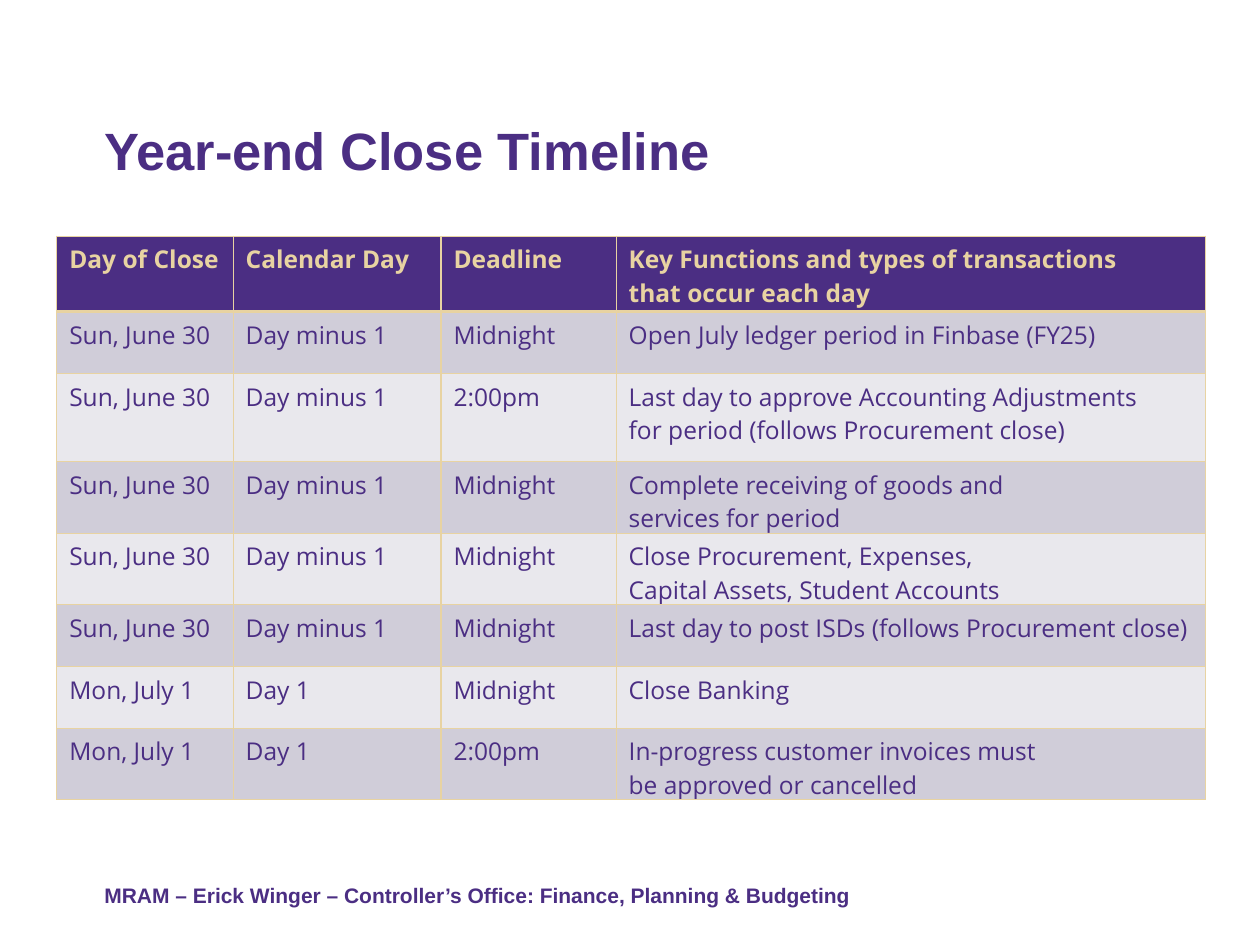
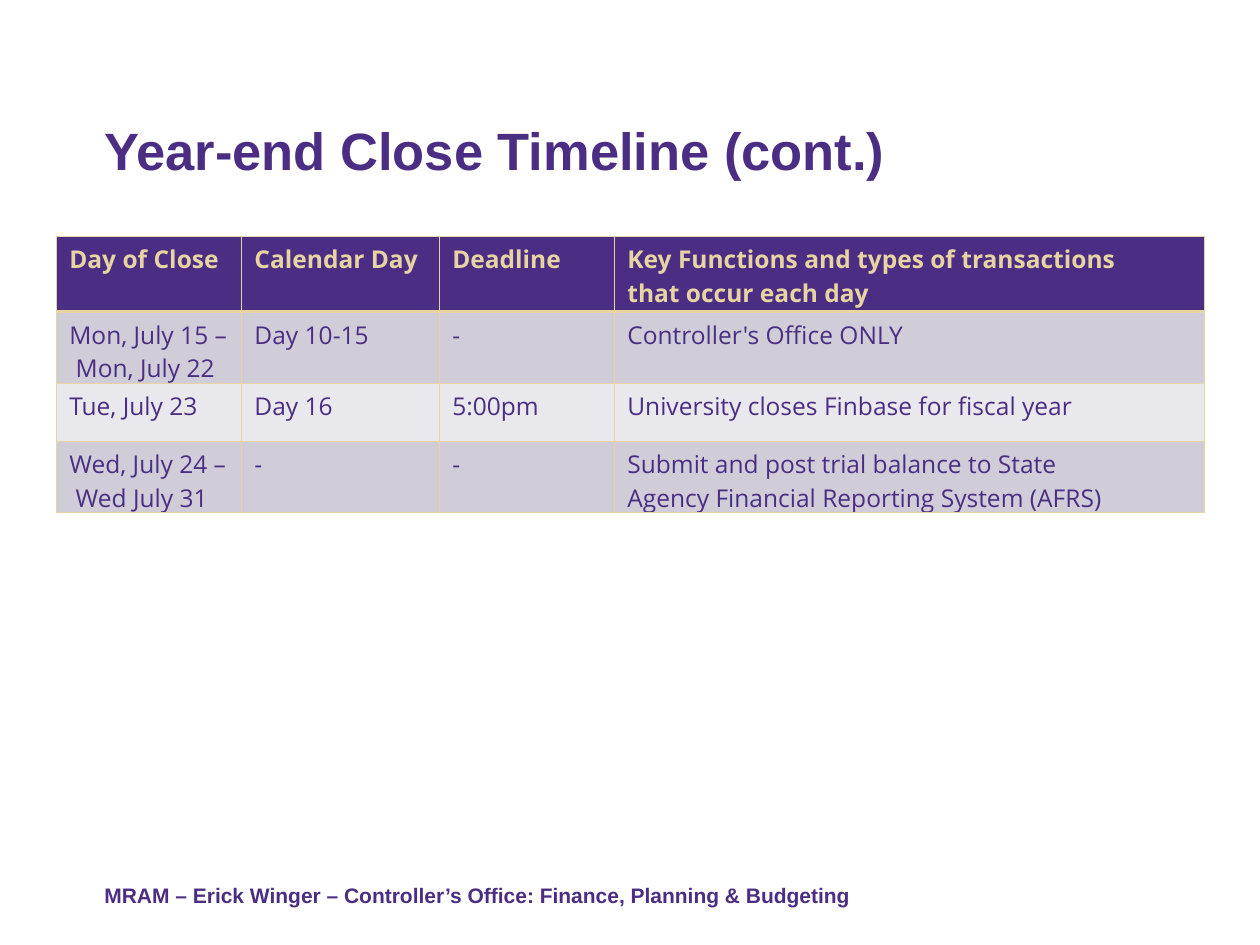
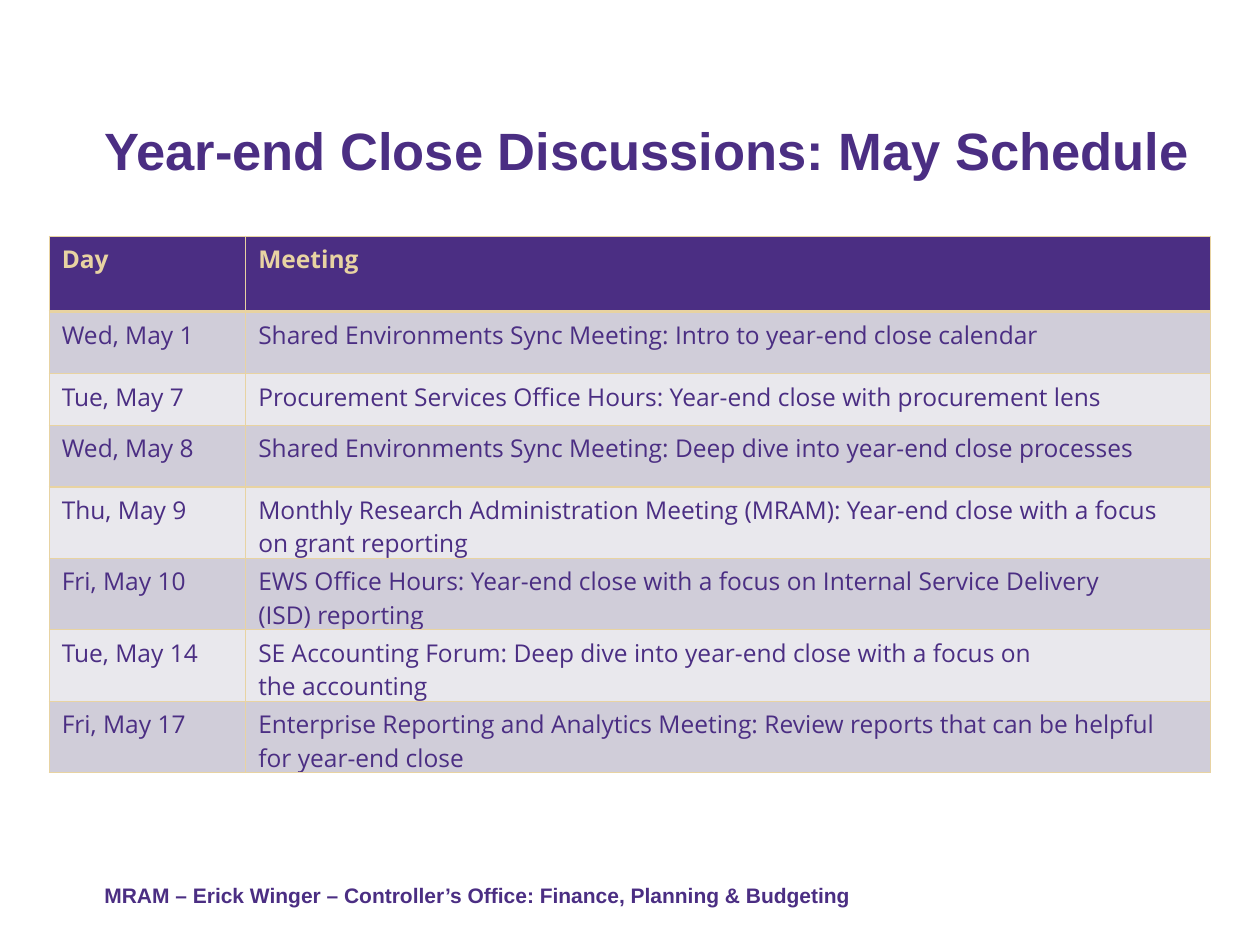
from dataclasses import dataclass

from lxml import etree
from pptx import Presentation
from pptx.dml.color import RGBColor
from pptx.enum.text import MSO_ANCHOR
from pptx.oxml.ns import qn
from pptx.slide import Slide
from pptx.table import _Cell
from pptx.util import Inches, Pt

ANCHOR_BOTTOM = MSO_ANCHOR.BOTTOM
SLIDE_WIDTH, SLIDE_HEIGHT = Inches(10), Inches(7.5)
COLOURS = {"purple": "4B2E83", "gold": "E8D3A2", "dark_band": "D0CDD9", "light_band": "E9E8ED"}
HEADING_FONT, TABLE_FONT = "Arial", "Open Sans"
TABLE_SIZE = 14
THIN, THICK = 0.75, 1.9
TABLE_TOP = 0.25  # share of the slide height
HEADER_ROW, BODY_ROW = 0.6, 0.49  # inches; rows grow with wrapped text
NO_BREAK_SPACE = chr(160)  # written as ~ in the table texts
FOOTER = "MRAM – Erick Winger – Controller’s Office: Finance, Planning & Budgeting"


@dataclass(frozen=True)
class HeadingStyle:
    """Position in shares of the slide, and type."""
    left: float
    top: float
    width: float
    height: float
    size: int
    line_spacing: float


@dataclass(frozen=True)
class Schedule:
    """One slide: columns are shares of the slide width."""
    title: str
    left: float
    columns: tuple[float, ...]
    rows: list[tuple[str, ...]]
    special_heights: dict[int, float]


TITLE_STYLE = HeadingStyle(0.073, 0.055, 0.895, 0.144, 30, 0.9)
FOOTER_STYLE = HeadingStyle(0.073, 0.919, 0.791, 0.048, 12, 1.5)

TIMELINE_HEADER = ("Day of~Close", "Calendar~Day", "Deadline",
                   "Key Functions and types of~transactions that~occur each day")
JUNE_30 = ("Sun,~June 30", "Day minus 1")
JULY_1 = ("Mon,~July 1", "Day 1")

SCHEDULES = [
    Schedule(
        "Year-end Close Timeline", 0.045, (0.14, 0.165, 0.139, 0.468),
        [
            TIMELINE_HEADER,
            (*JUNE_30, "Midnight", "Open July ledger period in Finbase (FY25)"),
            (*JUNE_30, "2:00pm", "Last day to approve Accounting~Adjustments "
             "for~period~(follows~Procurement~close)"),
            (*JUNE_30, "Midnight", "Complete receiving of goods and services~for~period"),
            (*JUNE_30, "Midnight", "Close Procurement, Expenses, "
             "Capital~Assets,~Student Accounts"),
            (*JUNE_30, "Midnight", "Last day to post ISDs (follows~Procurement close)"),
            (*JULY_1, "Midnight", "Close Banking"),
            (*JULY_1, "2:00pm", "In-progress customer invoices must be~approved~or cancelled"),
        ],
        {2: 0.7},
    ),
    Schedule(
        "Year-end Close Timeline (cont.)", 0.045, (0.147, 0.157, 0.139, 0.468),
        [
            TIMELINE_HEADER,
            ("Mon,~July 15 –~Mon, July 22", "Day 10-15", "-", "Controller's Office ONLY"),
            ("Tue, July 23", "Day 16", "5:00pm", "University closes Finbase for fiscal year"),
            ("Wed,~July 24 –~Wed July 31", "-", "-", "Submit and~post trial~balance to State "
             "Agency~Financial Reporting System (AFRS)"),
        ],
        {2: 0.46},
    ),
    Schedule(
        "Year-end Close Discussions: May Schedule", 0.039, (0.156, 0.766),
        [
            ("Day", "Meeting"),
            ("Wed, May 1", "Shared Environments Sync Meeting: Intro to year-end close calendar"),
            ("Tue, May 7", "Procurement Services Office Hours: "
             "Year-end close with procurement lens"),
            ("Wed, May 8", "Shared Environments Sync Meeting: "
             "Deep dive into year-end close processes"),
            ("Thu, May 9", "Monthly Research Administration Meeting (MRAM): "
             "Year-end close with a focus on~grant reporting"),
            ("Fri, May 10", "EWS Office Hours: Year-end close with a focus on "
             "Internal Service Delivery (ISD)~reporting"),
            ("Tue, May 14", "SE Accounting Forum: Deep dive into year-end close "
             "with a focus on the~accounting"),
            ("Fri, May 17", "Enterprise Reporting and Analytics Meeting: "
             "Review reports that can be helpful for~year-end close"),
        ],
        {2: 0.41},
    ),
]


def across(share: float) -> int:
    return round(SLIDE_WIDTH * share)


def down(share: float) -> int:
    return round(SLIDE_HEIGHT * share)


def colour(name: str) -> RGBColor:
    return RGBColor.from_string(COLOURS[name])


def set_font(paragraph, face: str, size: int, colour_name: str, bold: bool) -> None:
    font = paragraph.font
    font.name, font.size, font.bold = face, Pt(size), bold
    font.color.rgb = colour(colour_name)


def add_heading(slide: Slide, text: str, style: HeadingStyle) -> None:
    box = slide.shapes.add_textbox(across(style.left), down(style.top),
                                   across(style.width), down(style.height))
    frame = box.text_frame
    frame.word_wrap = True
    frame.vertical_anchor = ANCHOR_BOTTOM
    paragraph = frame.paragraphs[0]
    paragraph.text = text
    paragraph.line_spacing = style.line_spacing
    set_font(paragraph, HEADING_FONT, style.size, "purple", True)


def set_borders(cell: _Cell, top: float, bottom: float) -> None:
    """Gold lines on all sides; they come before the fill in the cell properties."""
    properties = cell._tc.get_or_add_tcPr()
    widths = {"a:lnL": THIN, "a:lnR": THIN, "a:lnT": top, "a:lnB": bottom}
    for position, (side, width) in enumerate(widths.items()):
        line = etree.Element(qn(side), w=str(Pt(width)))
        fill = etree.SubElement(line, qn("a:solidFill"))
        etree.SubElement(fill, qn("a:srgbClr"), val=COLOURS["gold"])
        properties.insert(position, line)


def fill_cell(cell: _Cell, text: str, row: int) -> None:
    is_header = row == 0
    band = "purple" if is_header else "dark_band" if row % 2 else "light_band"
    cell.fill.solid()
    cell.fill.fore_color.rgb = colour(band)
    set_borders(cell, THICK if row == 1 else THIN, THICK if is_header else THIN)
    paragraph = cell.text_frame.paragraphs[0]
    paragraph.text = text.replace("~", NO_BREAK_SPACE)
    set_font(paragraph, TABLE_FONT, TABLE_SIZE, "gold" if is_header else "purple", is_header)


def add_schedule_table(slide: Slide, schedule: Schedule) -> None:
    heights = [schedule.special_heights.get(row, BODY_ROW if row else HEADER_ROW)
               for row in range(len(schedule.rows))]
    table = slide.shapes.add_table(
        len(schedule.rows), len(schedule.columns), across(schedule.left), down(TABLE_TOP),
        across(sum(schedule.columns)), Inches(sum(heights))).table
    table.horz_banding = False
    for column, share in zip(table.columns, schedule.columns):
        column.width = across(share)
    for row, (height, texts) in enumerate(zip(heights, schedule.rows)):
        table.rows[row].height = Inches(height)
        for column, text in enumerate(texts):
            fill_cell(table.cell(row, column), text, row)


def main() -> None:
    deck = Presentation()
    deck.slide_width, deck.slide_height = SLIDE_WIDTH, SLIDE_HEIGHT
    blank = deck.slide_layouts[6]
    for schedule in SCHEDULES:
        slide = deck.slides.add_slide(blank)
        add_heading(slide, schedule.title, TITLE_STYLE)
        add_heading(slide, FOOTER, FOOTER_STYLE)
        add_schedule_table(slide, schedule)
    deck.save("out.pptx")


if __name__ == "__main__":
    main()
